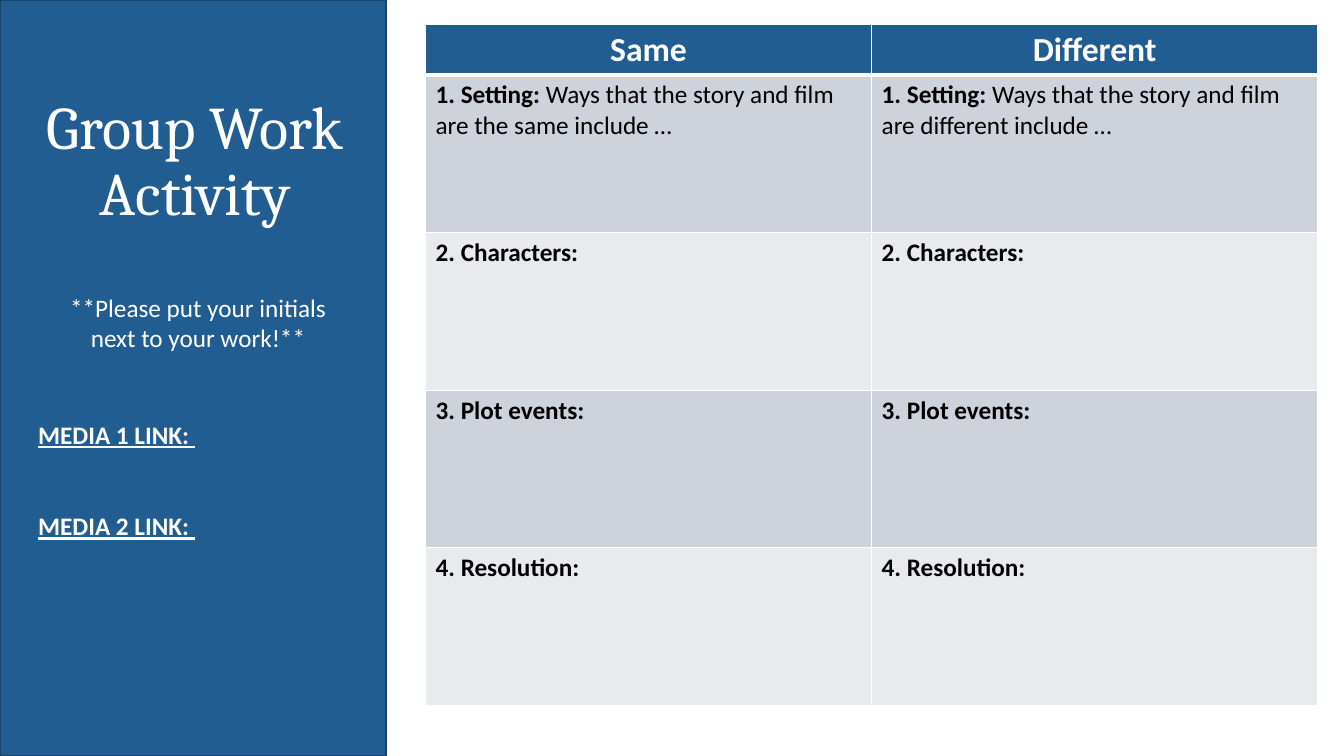
import pptx
import pptx.dml.color
import pptx.enum.shapes
import pptx.enum.text
import pptx.oxml
import pptx.oxml.ns
import pptx.util
from pptx.util import Inches

BLUE, WHITE, BLACK = "215D90", "FFFFFF", "000000"
BANDS = ("CDD2DB", "E8EAEE")
ALIGN = pptx.enum.text.PP_ALIGN
BODY = {"name": "Calibri", "size": pptx.util.Pt(18)}
BOLD = {**BODY, "bold": True}
HEADING = {**BOLD, "size": pptx.util.Pt(24)}
TITLE = {"name": "Cambria", "size": pptx.util.Pt(43.2)}
LINK = {**BOLD, "underline": True}
TOPICS = ("Setting", "Characters", "Plot events", "Resolution")
NAMESPACE = pptx.oxml.ns.nsdecls("a")


def color(value):
    return pptx.dml.color.RGBColor.from_string(value)


def add_span(para, text, formats, ink):
    span = para.add_run()
    span.text = text
    for name, value in formats.items():
        setattr(span.font, name, value)
    span.font.color.rgb = color(ink)
    return span


def add_box(page, left, top, width, height):
    box = page.shapes.add_textbox(Inches(left), Inches(top), Inches(width), Inches(height))
    box.text_frame.word_wrap = True
    return box.text_frame


def add_text_shadow(span):
    effect = pptx.oxml.parse_xml(
        f'<a:effectLst {NAMESPACE}><a:outerShdw blurRad="38100" dist="38100" dir="2700000">'
        '<a:srgbClr val="000000"><a:alpha val="43000"/></a:srgbClr></a:outerShdw></a:effectLst>')
    span.font.fill  # the effect follows the fill
    span.font._element.find(pptx.oxml.ns.qn("a:solidFill")).addnext(effect)


def set_borders(cell, widths):
    for index, (side, width) in enumerate(widths.items()):
        line = pptx.oxml.parse_xml(
            f'<a:ln{side} {NAMESPACE} w="{pptx.util.Pt(width)}"><a:solidFill>'
            f'<a:srgbClr val="{WHITE}"/></a:solidFill></a:ln{side}>')
        cell._tc.get_or_add_tcPr().insert(index, line)


def add_sidebar(page, left, top, width, height):
    # Blue panel
    panel = page.shapes.add_shape(pptx.enum.shapes.MSO_SHAPE.RECTANGLE,
                                  Inches(left), Inches(top), Inches(width), Inches(height))
    panel.shadow.inherit = False
    panel.fill.solid()
    panel.fill.fore_color.rgb = color(BLUE)
    panel.line.color.rgb = color("18456B")
    panel.line.width = pptx.util.Pt(2)

    # Title
    frame = add_box(page, left + 0.28, top + 0.93, 3.31, 1.37)
    frame.vertical_anchor = pptx.enum.text.MSO_ANCHOR.MIDDLE
    para = frame.paragraphs[0]
    para.alignment, para.line_spacing = ALIGN.CENTER, 0.9
    add_span(para, "Group Work Activity", TITLE, WHITE)

    # Instruction
    frame = add_box(page, left + 0.38, top + 2.85, 3.17, 0.71)
    para = frame.paragraphs[0]
    para.alignment = ALIGN.CENTER
    add_span(para, "**Please put your initials next to your work!**", BODY, WHITE)

    # Media links
    frame = add_box(page, left + 0.28, top + 4.11, 3.31, 1.55)
    for number in (1, 2):
        para = frame.paragraphs[0] if number == 1 else frame.add_paragraph()
        para.space_before = pptx.util.Pt(0 if number == 1 else 43.5)
        add_text_shadow(add_span(para, f"MEDIA {number} LINK: ", LINK, WHITE))


def add_comparison(page, left, top, width, height, header_height):
    columns = ("Same", "Different")
    table = page.shapes.add_table(len(TOPICS) + 1, len(columns), Inches(left), Inches(top),
                                  Inches(width), Inches(height)).table
    for row in table.rows:
        row.height = Inches((height - header_height) / len(TOPICS))
    table.rows[0].height = Inches(header_height)

    for column, heading in enumerate(columns):
        for row in range(len(TOPICS) + 1):
            cell = table.cell(row, column)
            para = cell.text_frame.paragraphs[0]
            if row == 0:
                para.alignment = ALIGN.CENTER
                add_span(para, heading, HEADING, WHITE)
            elif row == 1:
                add_span(para, f"{row}. {TOPICS[0]}: ", BOLD, BLACK)
                add_span(para, "Ways that the story and film are "
                         f"{'the ' if column == 0 else ''}{heading.lower()} include …",
                         {**BODY, "bold": False}, BLACK)
            else:
                add_span(para, f"{row}. {TOPICS[row - 1]}:", BOLD, BLACK)
            cell.fill.solid()
            cell.fill.fore_color.rgb = color(BANDS[(row - 1) % 2] if row else BLUE)
            set_borders(cell, {"L": 1, "R": 1, "T": 3 if row == 1 else 1, "B": 1 if row else 3})


def main():
    deck = pptx.Presentation()
    deck.slide_width, deck.slide_height = Inches(13.33), Inches(7.5)
    page = deck.slides.add_slide(deck.slide_layouts[6])
    add_sidebar(page, 0, 0, 3.83, 7.5)
    add_comparison(page, 4.22, 0.24, 8.85, 6.76, 0.5)
    deck.save("out.pptx")


if __name__ == "__main__":
    main()
